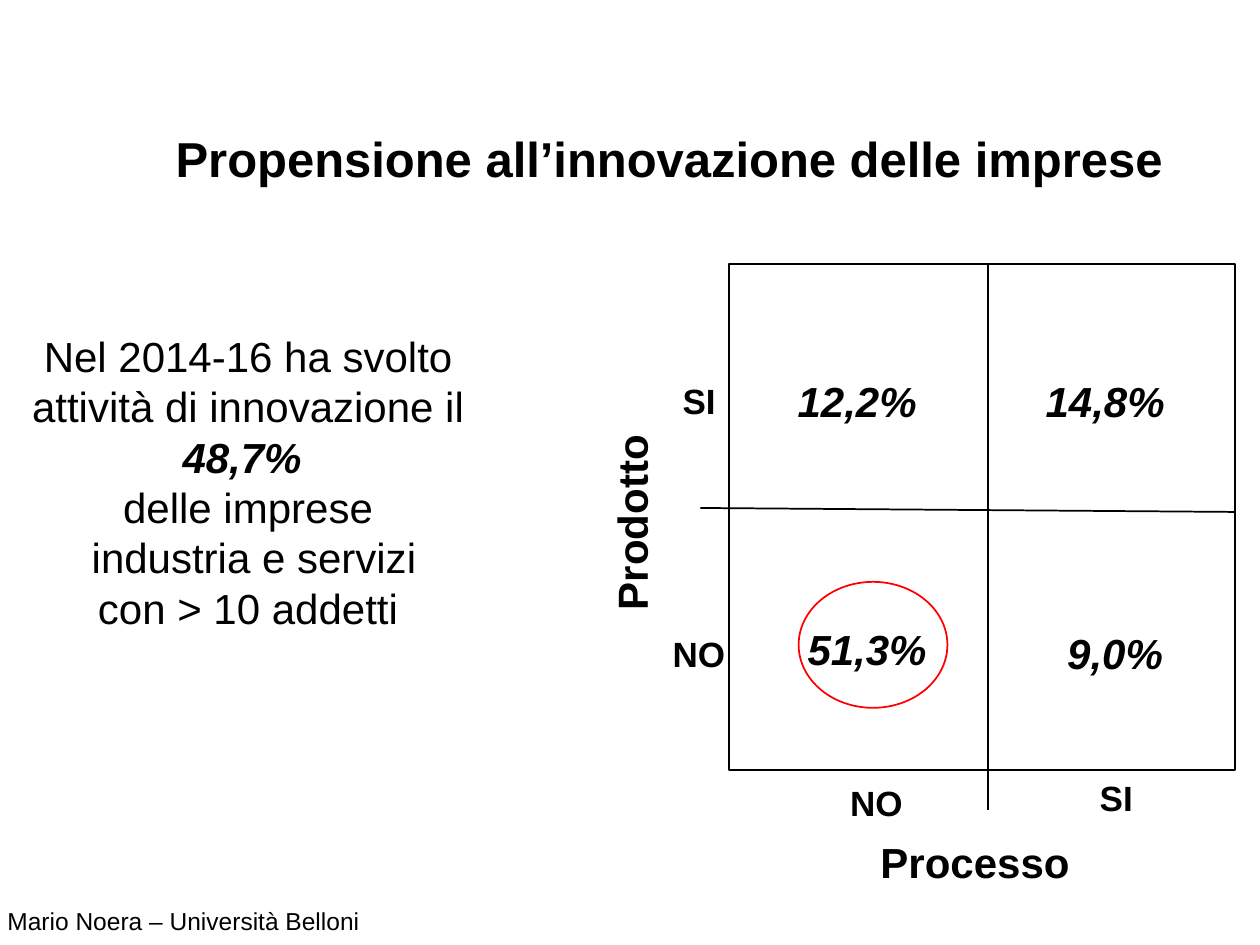
from lxml.etree import SubElement
from pptx import Presentation
from pptx.dml.color import RGBColor
from pptx.enum.shapes import MSO_CONNECTOR, MSO_SHAPE
from pptx.enum.text import MSO_ANCHOR, MSO_AUTO_SIZE, PP_ALIGN
from pptx.oxml.ns import qn
from pptx.util import Cm, Pt

COLORS = {"ink": "000000", "highlight": "FF0000"}
FONT = "Arial"
SPACE_WIDTH = 0.24  # one blank at 24 pt, in cm


def write_text(para, text, size=24, bold=False, italic=False, align=PP_ALIGN.LEFT,
               before=0, left=0, right=0):
    """Fill a paragraph; left and right are its indents in cm."""
    span = para.add_run()
    span.text = text
    span.font.name = FONT
    span.font.size = Pt(size)
    span.font.bold = bold
    span.font.italic = italic
    span.font.color.rgb = RGBColor.from_string(COLORS["ink"])
    para.alignment = align
    para.space_before = Pt(before)
    para.line_spacing = 1.0
    properties = para._p.get_or_add_pPr()
    properties.set("marL", str(Cm(left)))
    properties.set("marR", str(Cm(right)))
    properties.set("indent", "0")
    SubElement(properties, qn("a:buNone"))


def place(box, left, top, width, height):
    """Move a text box or placeholder and prepare its frame."""
    box.left, box.top, box.width, box.height = Cm(left), Cm(top), Cm(width), Cm(height)
    frame = box.text_frame
    frame.word_wrap = True
    frame.auto_size = MSO_AUTO_SIZE.NONE
    frame.vertical_anchor = MSO_ANCHOR.TOP
    return frame


def add_label(page, text, left, top, width, height, rotation=0, **text_format):
    box = page.shapes.add_textbox(0, 0, 0, 0)
    frame = place(box, left, top, width, height)
    box.rotation = rotation
    write_text(frame.paragraphs[0], text, bold=True, **text_format)


def add_outline(page, kind, left, top, width, height, color):
    shape = page.shapes.add_shape(kind, Cm(left), Cm(top), Cm(width), Cm(height))
    shape.shadow.inherit = False
    shape.fill.background()
    shape.line.color.rgb = RGBColor.from_string(COLORS[color])
    shape.line.width = Pt(1)


def add_divider(page, x1, y1, x2, y2):
    line = page.shapes.add_connector(MSO_CONNECTOR.STRAIGHT, Cm(x1), Cm(y1), Cm(x2), Cm(y2))
    line.line.color.rgb = RGBColor.from_string(COLORS["ink"])
    line.line.width = Pt(1)
    SubElement(line._element.spPr, qn("a:effectLst"))


def add_summary(body):
    frame = place(body, 0.1, 6.53, 9.8, 6.4)
    lines = [
        ("Nel 2014-16 ha svolto attività di innovazione il", {}),
        ("48,7%", {"bold": True, "italic": True, "right": SPACE_WIDTH}),
        ("delle imprese", {}),
        ("industria e servizi", {"left": SPACE_WIDTH}),
        ("con > 10 addetti", {}),
    ]
    for index, (text, text_format) in enumerate(lines):
        para = frame.add_paragraph() if index else frame.paragraphs[0]
        write_text(para, text, align=PP_ALIGN.CENTER, **text_format)


def add_matrix(page):
    # Frame and dividing lines
    add_outline(page, MSO_SHAPE.RECTANGLE, 14.7, 5.33, 10.2, 10.2, "ink")
    add_divider(page, 19.91, 5.33, 19.91, 16.33)
    add_divider(page, 14.12, 10.24, 24.9, 10.32)

    # Shares of firms
    for text, left, top in [("12,2%", 15.7, 7.44), ("14,8%", 20.7, 7.44),
                            ("51,3%", 15.9, 12.45), ("9,0%", 20.9, 12.52)]:
        add_label(page, text, left, top, 3.4, 1.3, italic=True,
                  align=PP_ALIGN.CENTER, right=SPACE_WIDTH)

    # Axis titles
    add_label(page, "Processo", 17.5, 16.74, 4.7, 1.3, before=6)
    add_label(page, "Prodotto", 10.39, 9.55, 4.7, 1.3, rotation=270, before=6)

    # Axis categories
    for text, left, top, width in [("SI", 13.51, 7.52, 1.4), ("SI", 21.92, 15.52, 1.4),
                                   ("NO", 13.31, 12.62, 1.8), ("NO", 16.89, 15.62, 1.8)]:
        add_label(page, text, left, top, width, 1.12, size=20, before=6)

    # Ring around firms without innovation
    add_outline(page, MSO_SHAPE.OVAL, 16.1, 11.73, 3, 2.54, "highlight")


def main():
    deck = Presentation()
    deck.slide_width, deck.slide_height = Cm(25.4), Cm(19.05)
    page = deck.slides.add_slide(deck.slide_layouts[1])

    # Title and summary
    title = place(page.shapes.title, 2.29, 2.46, 22.4, 1.45)
    write_text(title.paragraphs[0], "Propensione all’innovazione delle imprese",
               size=28, bold=True, align=PP_ALIGN.CENTER, before=6)
    add_summary(page.placeholders[1])

    add_matrix(page)

    # Footer
    footer = place(page.shapes.add_textbox(0, 0, 0, 0), -0.1, 18.14, 8.25, 0.86)
    write_text(footer.paragraphs[0], "Mario Noera – Università Belloni", size=14, before=6)

    deck.save("out.pptx")


if __name__ == "__main__":
    main()
